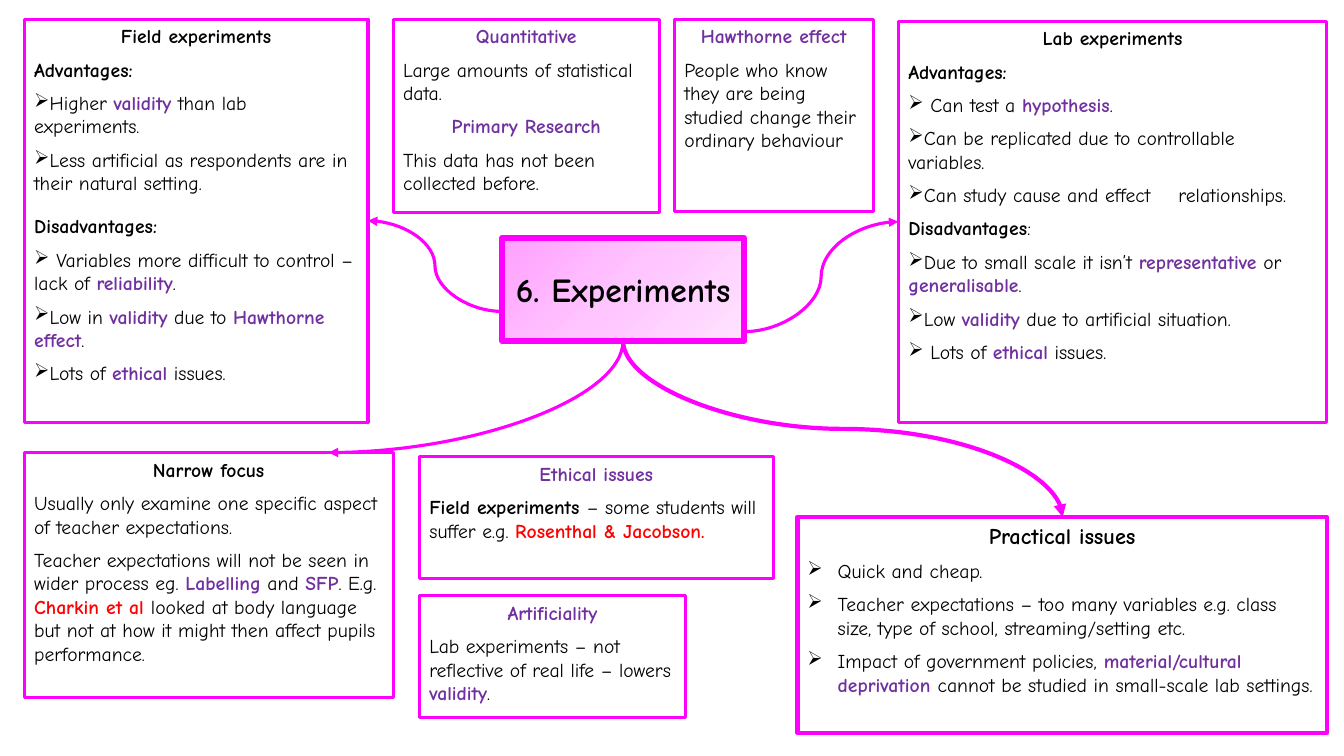
from copy import deepcopy

from lxml.etree import SubElement
from pptx import Presentation
from pptx.dml.color import RGBColor
from pptx.enum.shapes import MSO_CONNECTOR as Link, MSO_SHAPE as Shape
from pptx.enum.text import MSO_ANCHOR as Anchor, PP_ALIGN as Align
from pptx.oxml.ns import qn
from pptx.util import Inches, Pt

PINK = RGBColor(0xFF, 0x00, 0xFF)
BLACK = RGBColor(0x00, 0x00, 0x00)
WHITE = RGBColor(0xFF, 0xFF, 0xFF)
PURPLE = RGBColor(0x70, 0x30, 0xA0)
RED = RGBColor(0xFF, 0x00, 0x00)
SHADES = [(0, RGBColor(0xFF, 0xA0, 0xFF)), (0.5, RGBColor(0xFF, 0xC5, 0xFF)),
          (1, RGBColor(0xFF, 0xE3, 0xFF))]
FONT = "Comic Neue"

# Runs are parted by "|". A first sign makes a run bold: * purple, ! red, # black.
# A line that starts with ^ is centred, with ➢ bulleted, with + set further down.
BOLD = {"*": PURPLE, "!": RED, "#": BLACK}
TOPIC = "6. Experiments"
TOPIC_AT = (4.98, 2.36, 2.4, 1.02)
BOXES = [
    ((0.24, 0.19, 3.41, 4), [
        "^#Field experiments",
        "#Advantages:",
        "➢Higher |*validity| than lab experiments.",
        "➢Less artificial as respondents are in their natural setting.",
        "+#Disadvantages:",
        "➢ Variables more difficult to control – lack of |*reliability|.",
        "➢Low in |*validity| due to |*Hawthorne effect|.",
        "➢Lots of |*ethical| issues."]),
    ((8.91, 0.21, 4.25, 3.98), [
        "^#Lab experiments",
        "#Advantages:",
        "➢ Can test a |*hypothesis|.",
        "➢Can be replicated due to controllable variables.",
        "➢Can study cause and effect\trelationships.",
        "#Disadvantages|:",
        "➢Due to small scale it isn’t |*representative| or |*generalisable|.",
        "➢Low |*validity| due to artificial situation.",
        "➢ Lots of |*ethical| issues."]),
    ((6.69, 0.19, 1.97, 1.91), [
        "^*Hawthorne effect",
        "People who know they are being studied change their ordinary behaviour"]),
    ((3.9, 0.19, 2.64, 1.92), [
        "^*Quantitative",
        "Large amounts of statistical data.",
        "^*Primary Research",
        "This data has not been collected before."]),
    ((0.24, 4.49, 3.66, 2.43), [
        "^#Narrow focus",
        "Usually only examine one specific aspect of teacher expectations.",
        "Teacher expectations will not be seen in wider process eg. |*Labelling| and "
        "|*SFP|. E.g. |!Charkin et al |looked at body language but not at how it "
        "might then affect pupils performance."]),
    ((4.16, 5.91, 2.64, 1.21), [
        "^*Artificiality",
        "Lab experiments – not reflective of real life – lowers |*validity|."]),
    ((4.16, 4.53, 3.51, 1.21), [
        "^*Ethical issues",
        "#Field experiments |– some students will suffer e.g. |!Rosenthal & Jacobson."]),
]
PRACTICAL = ((7.91, 5.13, 5.25, 2.14), [
    "^#Practical issues",
    "➢Quick and cheap.",
    "➢Teacher expectations – too many variables e.g. class size, type of school, "
    "streaming/setting etc.",
    "➢Impact of government policies, |*material/cultural deprivation |cannot be "
    "studied in small-scale lab settings."])
# start, end, line width
SIDEWAYS = [((4.98, 3.09), (3.65, 2.19), 2.25), ((7.38, 3.29), (8.91, 2.2), 2.25)]
# start, end, line width, preset
DOWNWARD = [((6.18, 3.38), (10.54, 5.13), 3, "curvedConnector3"),
            ((6.18, 3.38), (3.26, 4.49), 2.25, "curvedConnector2")]


def write(para, line, size, indent):
    props = para._p.get_or_add_pPr()
    props.set("marL", str(Inches(indent)))
    props.set("indent", str(-Inches(indent)))
    para.alignment = Align.CENTER if line[0] == "^" else Align.LEFT
    if line[0] == "➢":
        SubElement(props, qn("a:buChar")).set("char", "➢")
    if "\t" in line:
        stop = SubElement(SubElement(props, qn("a:tabLst")), qn("a:tab"))
        stop.set("pos", str(Inches(2.68)))
        stop.set("algn", "l")
    for part in line.lstrip("^➢+").split("|"):
        bold = part[0] in BOLD
        run = para.add_run()
        run.text = part[1:] if bold else part
        font = run.font
        font.name, font.size, font.bold = FONT, Pt(size), bold
        font.color.rgb = BOLD.get(part[0], BLACK)


def add_box(at, lines, width=2.25, head=14, indent=0, fill=True):
    box = slide.shapes.add_shape(Shape.RECTANGLE, *map(Inches, at))
    box.shadow.inherit = False
    if fill:
        box.fill.solid()
        box.fill.fore_color.rgb = WHITE
    else:
        box.fill.background()
    box.line.color.rgb = PINK
    box.line.width = Pt(width)
    frame = box.text_frame
    frame.word_wrap = True
    frame.vertical_anchor = Anchor.TOP
    for i, line in enumerate(lines):
        para = frame.add_paragraph() if i else frame.paragraphs[0]
        if i:
            para.space_before = Pt(14 if line[0] == "+" else 7)
        write(para, line, 14 if i else head, indent)


def add_curve(start, end, width):
    curve = slide.shapes.add_connector(Link.CURVE, *map(Inches, start + end))
    curve.line.color.rgb = PINK
    curve.line.width = Pt(width)
    SubElement(curve.line._get_or_add_ln(), qn("a:tailEnd")).set("type", "triangle")
    SubElement(curve._element.spPr, qn("a:effectLst"))
    return curve


def add_drop(start, end, width, preset):
    """Add a curve that leaves its start downward: a sideways curve, turned."""
    (x1, y1), (x2, y2) = start, end
    mid_x, mid_y = (x1 + x2) / 2, (y1 + y2) / 2
    half_w, half_h = (y2 - y1) / 2, abs(x2 - x1) / 2
    turn = 270 if x2 > x1 else 90
    if turn == 270:
        half_w = -half_w
    curve = add_curve((mid_x - half_w, mid_y - half_h),
                      (mid_x + half_w, mid_y + half_h), width)
    props = curve._element.spPr
    props.find(qn("a:xfrm")).set("rot", str(turn * 60000))
    props.find(qn("a:prstGeom")).set("prst", preset)


def add_topic():
    title = slide.shapes.title
    title.left, title.top, title.width, title.height = map(Inches, TOPIC_AT)
    title.fill.gradient()
    title.fill.gradient_angle = 315
    stops = title._element.spPr.find(qn("a:gradFill")).find(qn("a:gsLst"))
    stops.append(deepcopy(stops[0]))
    for stop, (place, shade) in zip(title.fill.gradient_stops, SHADES):
        stop.position = place
        stop.color.rgb = shade
    title.line.color.rgb = PINK
    title.line.width = Pt(4.5)
    frame = title.text_frame
    frame.text = TOPIC
    frame.word_wrap = False
    frame.vertical_anchor = Anchor.MIDDLE
    para = frame.paragraphs[0]
    para.alignment = Align.CENTER
    font = para.runs[0].font
    font.name, font.size, font.bold = FONT, Pt(24), True
    font.color.rgb = BLACK


deck = Presentation()
deck.slide_width, deck.slide_height = Inches(13.33), Inches(7.5)
slide = deck.slides.add_slide(deck.slide_layouts[5])
add_topic()
for at, lines in BOXES:
    add_box(at, lines)
add_box(*PRACTICAL, width=3, head=16, indent=0.3, fill=False)
for curve in SIDEWAYS:
    add_curve(*curve)
for drop in DOWNWARD:
    add_drop(*drop)
deck.save("out.pptx")
